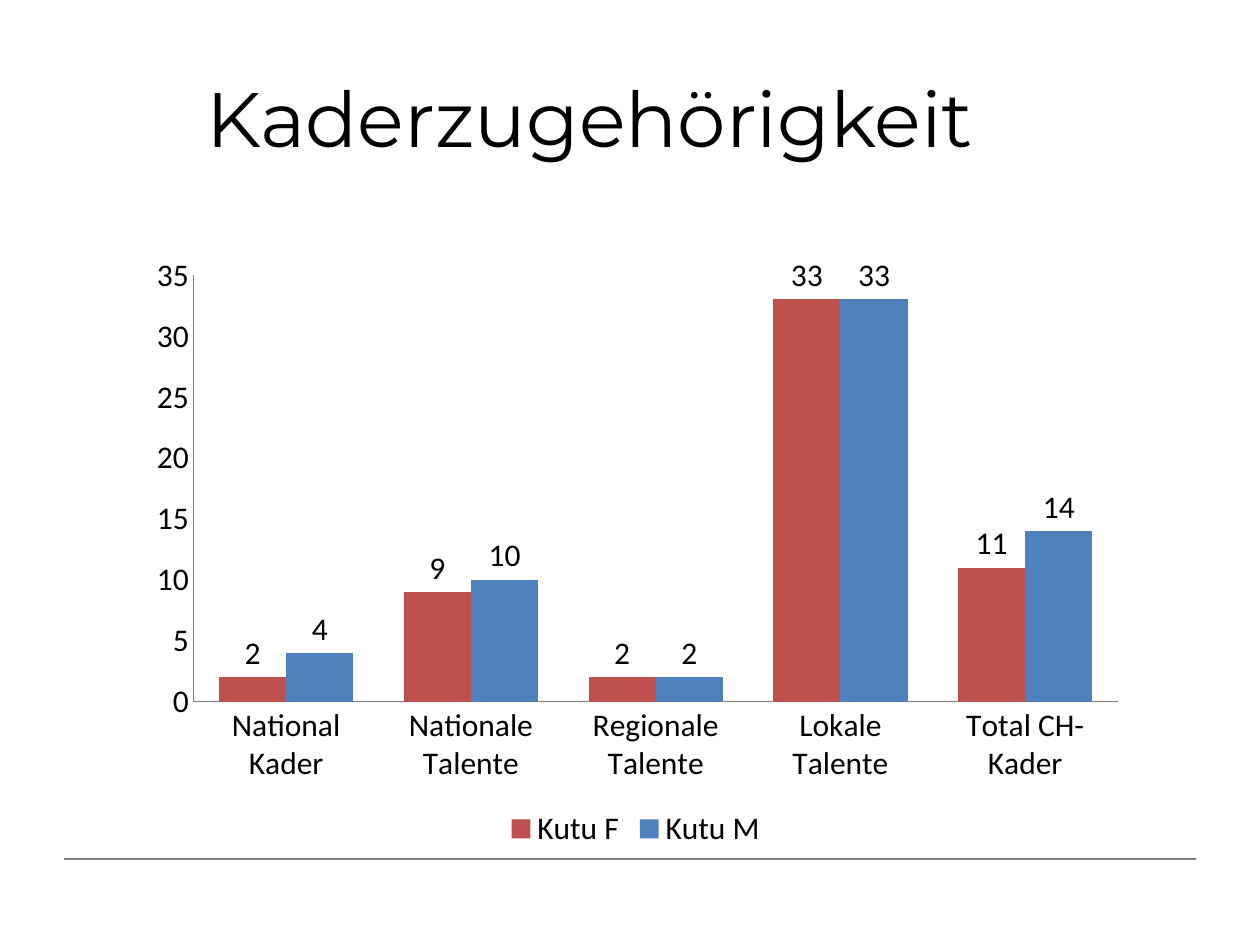
from lxml.etree import SubElement
from pptx import Presentation
from pptx.chart.data import CategoryChartData
from pptx.dml.color import RGBColor
from pptx.enum.chart import XL_CHART_TYPE, XL_LABEL_POSITION, XL_LEGEND_POSITION, XL_TICK_MARK
from pptx.enum.shapes import MSO_CONNECTOR
from pptx.enum.text import MSO_ANCHOR, PP_ALIGN
from pptx.oxml import parse_xml
from pptx.oxml.ns import nsdecls, qn
from pptx.util import Inches, Pt

BLACK = RGBColor(0x00, 0x00, 0x00)
GRAY = RGBColor(0x80, 0x80, 0x80)
RED = RGBColor(0xC0, 0x50, 0x4D)
BLUE = RGBColor(0x4F, 0x81, 0xBD)

TITLE = "Kaderzugehörigkeit"
CATEGORIES = ["National Kader", "Nationale Talente", "Regionale Talente", "Lokale Talente", "Total CH- Kader"]
SERIES = [("Kutu F", (2, 9, 2, 33, 11), RED), ("Kutu M", (4, 10, 2, 33, 14), BLUE)]

TITLE_BOX = (1.54, 0.3, 7.96, 1.25)
CHART_BOX = (1.06, 1.94, 7.97, 4.84)
FOOTER_LINE = (0.51, 6.82, 9.49, 6.82)
PLOT_SHARES = {"x": 0.06, "y": 0.05, "w": 0.92, "h": 0.7}


def apply(target, **values):
    """Set each named format value on the target."""
    for name, value in values.items():
        setattr(target, name, value)


def inches(lengths):
    """Convert a row of lengths to slide units."""
    return [Inches(length) for length in lengths]


def add_title(page):
    """Place and format the title placeholder."""
    title = page.shapes.title
    apply(title, **dict(zip(("left", "top", "width", "height"), inches(TITLE_BOX))))
    title.text = TITLE
    apply(title.text_frame, vertical_anchor=MSO_ANCHOR.MIDDLE, word_wrap=True)
    para = title.text_frame.paragraphs[0]
    para.alignment = PP_ALIGN.LEFT
    span = para.runs[0]
    apply(span.font, name="Montserrat", size=Pt(44))
    span.font.color.rgb = BLACK


def add_footer_line(page):
    """Draw the thin rule near the foot of the slide."""
    rule = page.shapes.add_connector(MSO_CONNECTOR.STRAIGHT, *inches(FOOTER_LINE))
    rule.line.color.rgb = GRAY
    rule.line.width = Pt(1)
    SubElement(rule._element.spPr, qn("a:effectLst"))


def set_plot_layout(chart):
    """Fix the inner plot area as shares of the chart."""
    plot_area = chart._chartSpace.chart.plotArea
    for old in plot_area.findall(qn("c:layout")):
        plot_area.remove(old)
    layout = parse_xml(f"<c:layout {nsdecls('c')}><c:manualLayout/></c:layout>")
    values = {"layoutTarget": "inner", "xMode": "edge", "yMode": "edge", **PLOT_SHARES}
    for name, value in values.items():
        SubElement(layout[0], qn(f"c:{name}")).set("val", str(value))
    plot_area.insert(0, layout)


def add_chart(page):
    """Add the clustered columns with labels and legend."""
    data = CategoryChartData()
    data.categories = CATEGORIES
    for name, values, _ in SERIES:
        data.add_series(name, values)
    chart = page.shapes.add_chart(XL_CHART_TYPE.COLUMN_CLUSTERED, *inches(CHART_BOX), data).chart
    apply(chart, has_title=False, has_legend=True)
    apply(chart.font, name="Calibri", size=Pt(18))
    chart.font.color.rgb = BLACK
    apply(chart.legend, position=XL_LEGEND_POSITION.BOTTOM, include_in_layout=False)
    for axis in (chart.category_axis, chart.value_axis):
        apply(axis, major_tick_mark=XL_TICK_MARK.NONE, minor_tick_mark=XL_TICK_MARK.NONE,
              has_major_gridlines=False)
        axis.format.line.color.rgb = GRAY
    apply(chart.value_axis, minimum_scale=0, maximum_scale=35, major_unit=5)
    plot = chart.plots[0]
    apply(plot, gap_width=75, overlap=0, vary_by_categories=False, has_data_labels=True)
    apply(plot.data_labels, show_value=True, position=XL_LABEL_POSITION.OUTSIDE_END)
    for series, (_, _, color) in zip(plot.series, SERIES):
        series.format.fill.solid()
        series.format.fill.fore_color.rgb = color
    set_plot_layout(chart)


def main():
    """Build the slide and save the deck."""
    deck = Presentation()
    apply(deck, slide_width=Inches(10), slide_height=Inches(7.5))
    page = deck.slides.add_slide(deck.slide_layouts[5])
    add_footer_line(page)
    add_title(page)
    add_chart(page)
    deck.save("out.pptx")


if __name__ == "__main__":
    main()
